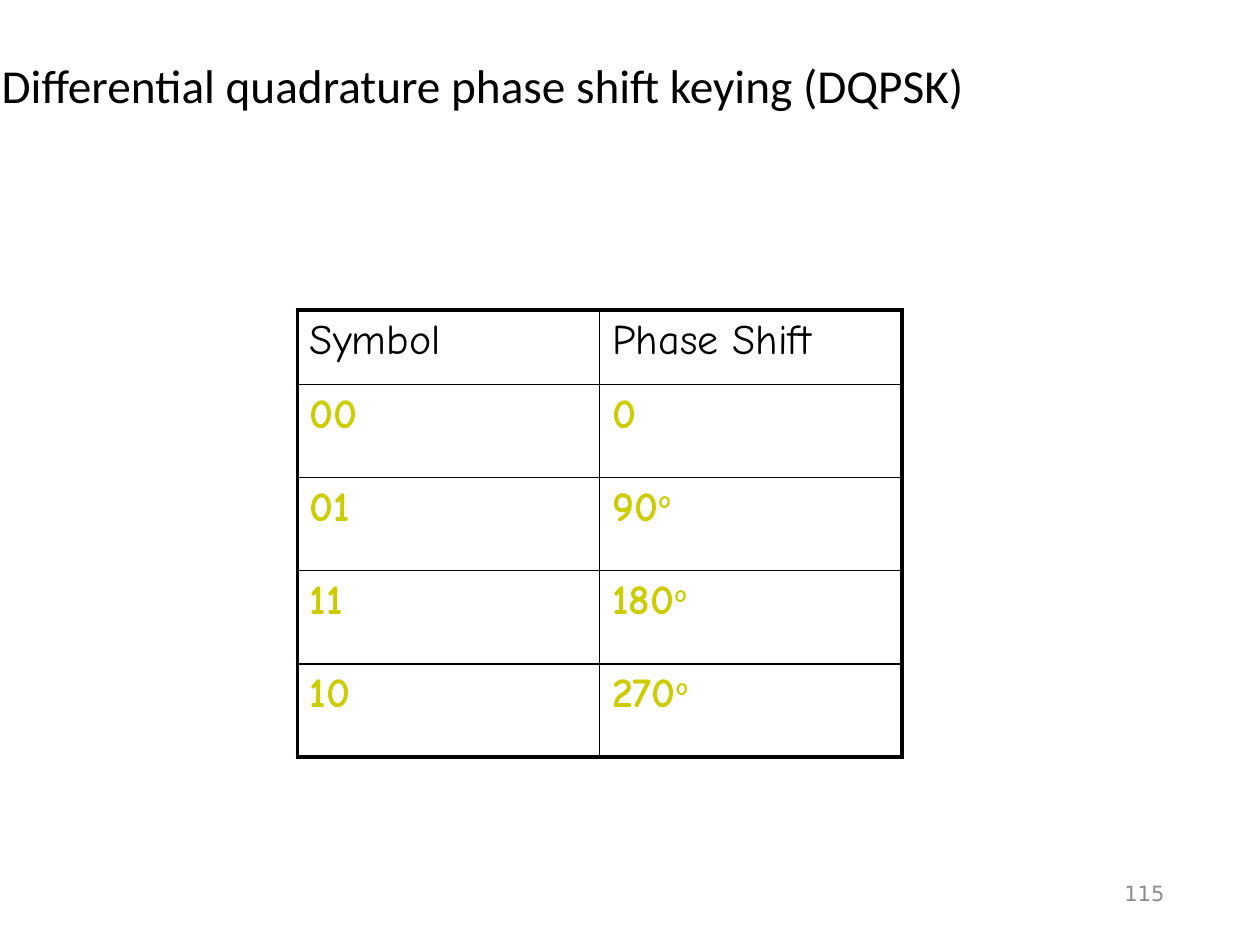
import lxml.etree
import pptx
import pptx.dml.color
import pptx.enum.text
import pptx.oxml.ns
import pptx.util

WIDTH, HEIGHT = 10, 7.5
ALIGN = pptx.enum.text.PP_ALIGN
ANCHOR = pptx.enum.text.MSO_ANCHOR
THIN, THICK = 0.96, 2.21
TITLE = {"name": "Calibri", "size": pptx.util.Pt(27)}
NUMBER = {"name": "DejaVu Sans", "size": pptx.util.Pt(12)}
HEADER = {"name": "Comic Neue", "size": pptx.util.Pt(24), "bold": False}
BODY = HEADER | {"bold": True}
ROWS = [
    [("Symbol", ""), ("Phase Shift", "")],
    [("00", ""), ("0", "")],
    [("01", ""), ("90", "o")],
    [("11", ""), ("180", "o")],
    [("10", ""), ("270", "o")],
]
ROW_HEIGHTS = [0.59] + [0.74] * 4


def color(value):
    """Turn a hex string into a colour."""
    return pptx.dml.color.RGBColor.from_string(value)


def inches(*values):
    """Turn numbers into lengths in inches."""
    return [pptx.util.Inches(value) for value in values]


def add_span(para, text, style, ink):
    """Add a formatted run to a paragraph and return it."""
    span = para.add_run()
    span.text = text
    for name, value in style.items():
        setattr(span.font, name, value)
    span.font.color.rgb = color(ink)
    return span


def add_line(page, box, text, style, ink, align):
    """Place one vertically centred line of text in a box."""
    frame = page.shapes.add_textbox(*inches(*box)).text_frame
    frame.word_wrap = True
    frame.vertical_anchor = ANCHOR.MIDDLE
    para = frame.paragraphs[0]
    para.alignment = align
    add_span(para, text, style, ink)


def set_borders(cell, widths):
    """Draw the four black borders of a cell."""
    properties = cell._tc.get_or_add_tcPr()
    name = pptx.oxml.ns.qn
    for side, width in widths.items():
        line = lxml.etree.SubElement(properties, name(f"a:ln{side}"), w=str(int(pptx.util.Pt(width))))
        fill = lxml.etree.SubElement(line, name("a:solidFill"))
        lxml.etree.SubElement(fill, name("a:srgbClr"), val="000000")


def add_phase_table(page, box):
    """Place the table of symbols and phase shifts in a box."""
    last_row, last_column = len(ROWS) - 1, len(ROWS[0]) - 1
    table = page.shapes.add_table(len(ROWS), len(ROWS[0]), *inches(*box)).table
    table.first_row = table.horz_banding = False
    for row, (height, entries) in enumerate(zip(ROW_HEIGHTS, ROWS)):
        table.rows[row].height = pptx.util.Inches(height)
        style, ink = (BODY, "CCCC00") if row else (HEADER, "000000")
        for column, (text, superscript) in enumerate(entries):
            cell = table.cell(row, column)
            outer = {"L": column == 0, "R": column == last_column, "T": row == 0, "B": row == last_row}
            set_borders(cell, {side: THICK if edge else THIN for side, edge in outer.items()})
            cell.fill.background()
            para = cell.text_frame.paragraphs[0]
            add_span(para, text, style, ink)
            if superscript:
                span = add_span(para, superscript, style, ink)
                span._r.get_or_add_rPr().set("baseline", "30000")


def main():
    """Build the slide and save it."""
    deck = pptx.Presentation()
    deck.slide_width, deck.slide_height = inches(WIDTH, HEIGHT)
    page = deck.slides.add_slide(deck.slide_layouts[6])
    add_line(page, (0.717 * WIDTH, 0.91 * HEIGHT, 0.217 * WIDTH, 0.07 * HEIGHT),
             "115", NUMBER, "8B8B8B", ALIGN.RIGHT)
    add_line(page, (-0.117 * WIDTH, 0, WIDTH, 0.178 * HEIGHT),
             "Differential quadrature phase shift keying (DQPSK)", TITLE, "000000", ALIGN.CENTER)
    add_phase_table(page, (0.236 * WIDTH, 0.328 * HEIGHT, 0.48 * WIDTH, sum(ROW_HEIGHTS)))
    deck.save("out.pptx")


if __name__ == "__main__":
    main()
